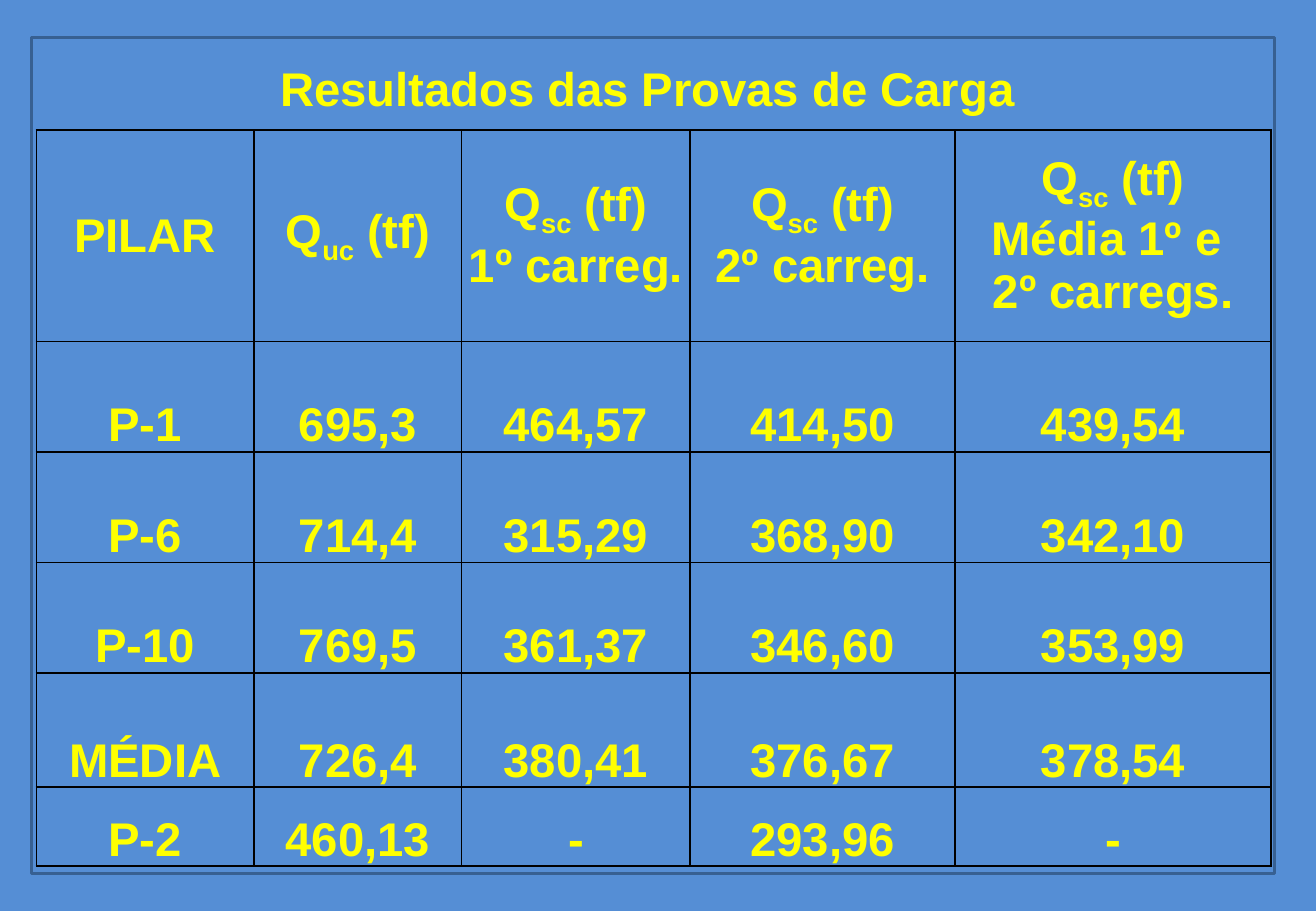
from lxml.etree import SubElement
from pptx import Presentation
from pptx.dml.color import RGBColor
from pptx.enum.shapes import MSO_SHAPE
from pptx.enum.text import MSO_ANCHOR, MSO_AUTO_SIZE, PP_ALIGN
from pptx.oxml import parse_xml
from pptx.oxml.ns import nsdecls, qn
from pptx.util import Inches, Pt

COLORS = {"back": "558ED5", "frame": "376092", "text": "FFFF00", "grid": "000000"}
COLS = [1.79, 1.71, 1.88, 2.18, 2.6]
ROWS = [1.74, 0.91, 0.91, 0.91, 0.94, 0.65]
DATA = [
    ["PILAR", "Q_uc_ (tf)", "Q_sc_ (tf)\n1º carreg.", "Q_sc_ (tf)\n2º carreg.",
     "Q_sc_ (tf)\nMédia 1º e \n2º carregs."],
    ["P-1", "695,3", "464,57", "414,50", "439,54"],
    ["P-6", "714,4", "315,29", "368,90", "342,10"],
    ["P-10", "769,5", "361,37", "346,60", "353,99"],
    ["MÉDIA", "726,4", "380,41", "376,67", "378,54"],
    ["P-2", "460,13", "-", "293,96", "-"],
]

deck = Presentation()
deck.slide_width, deck.slide_height = Inches(10.83), Inches(7.5)
slide = deck.slides.add_slide(deck.slide_layouts[5])
slide.background.fill.solid()
slide.background.fill.fore_color.rgb = RGBColor.from_string(COLORS["back"])


def area(left, top, width, height):
    wide, high = deck.slide_width / 100, deck.slide_height / 100
    return int(left * wide), int(top * high), int(width * wide), int(height * high)


def write(frame, text, size=28, color="text", bold=True, font="Arial"):
    for row, line in enumerate(text.split("\n")):
        para = frame.add_paragraph() if row else frame.paragraphs[0]
        para.alignment = PP_ALIGN.CENTER
        for part, words in enumerate(line.split("_")):
            run = para.add_run()
            run.text = words
            run.font.size = Pt(size)
            run.font.bold = bold
            run.font.name = font
            run.font.color.rgb = RGBColor.from_string(COLORS[color])
            if part % 2:
                run._r.get_or_add_rPr().set("baseline", "-25000")


frame = slide.shapes.add_shape(MSO_SHAPE.RECTANGLE, *area(2.4, 4.13, 94.46, 91.73))
frame.shadow.inherit = False
frame.fill.background()
frame.line.color.rgb = RGBColor.from_string(COLORS["frame"])
frame.line.width = Pt(1.5)

title = slide.shapes.title
title.left, title.top, title.width, title.height = area(2.77, 5.87, 93.81, 11.73)
title.text_frame.vertical_anchor = MSO_ANCHOR.TOP
title.text_frame.auto_size = MSO_AUTO_SIZE.NONE
write(title.text_frame, "Resultados das Provas de Carga ")

place = area(2.77, 14.27, 93.81, 80.8)
table = slide.shapes.add_table(len(ROWS), len(COLS), *place).table
table.first_row = table.horz_banding = False
for col, width in zip(table.columns, COLS):
    col.width = Inches(width)
for row, height in zip(table.rows, ROWS):
    row.height = Inches(height)

for r, line in enumerate(DATA):
    for c, text in enumerate(line):
        cell = table.cell(r, c)
        cell.margin_left = cell.margin_right = Inches(0.05)
        cell.margin_top = cell.margin_bottom = 0
        cell.vertical_anchor = MSO_ANCHOR.BOTTOM if r else MSO_ANCHOR.MIDDLE
        cell.fill.background()
        props = cell._tc.get_or_add_tcPr()
        for spot, side in enumerate("LRTB"):
            edge = parse_xml(f'<a:ln{side} {nsdecls("a")} w="{Pt(1)}"/>')
            fill = SubElement(edge, qn("a:solidFill"))
            SubElement(fill, qn("a:srgbClr"), val=COLORS["grid"])
            props.insert(spot, edge)
        write(cell.text_frame, text)

deck.save("out.pptx")
